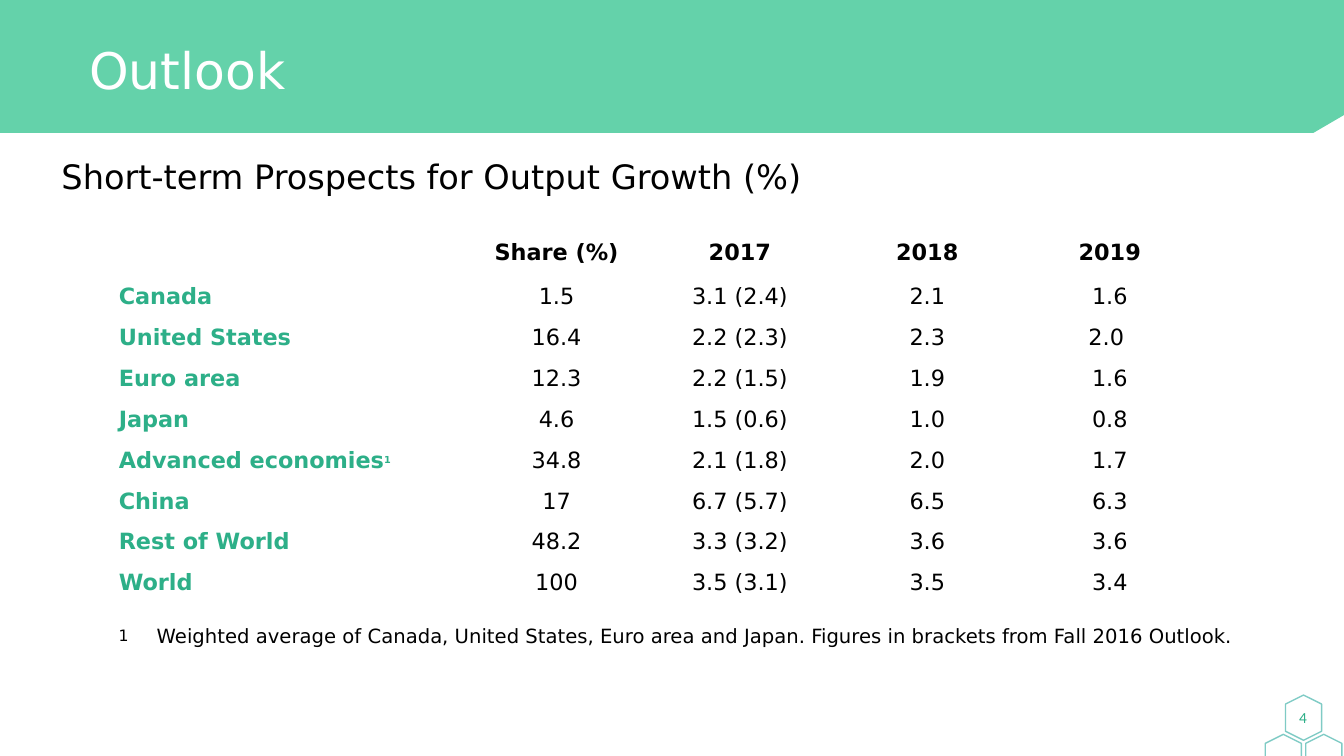
from dataclasses import dataclass

from lxml.etree import SubElement
from pptx import Presentation
from pptx.dml.color import RGBColor
from pptx.enum.shapes import MSO_SHAPE as Preset
from pptx.enum.text import MSO_ANCHOR as Anchor, PP_ALIGN as Align
from pptx.oxml.ns import qn
from pptx.util import Cm, Pt


@dataclass(frozen=True)
class Theme:
    font: str = "DejaVu Sans"
    number_font: str = "Calibri"
    band: RGBColor = RGBColor(0x64, 0xD2, 0xAA)
    accent: RGBColor = RGBColor(0x2D, 0xAF, 0x88)
    outline: RGBColor = RGBColor(0x00, 0x99, 0x8D)
    white: RGBColor = RGBColor(0xFF, 0xFF, 0xFF)
    black: RGBColor = RGBColor(0x00, 0x00, 0x00)
    title_size: int = 36
    heading_size: int = 24
    table_size: int = 16
    note_size: int = 14
    superscript_size: int = 12
    number_size: int = 11


THEME = Theme()
WIDTH, HEIGHT = 33.87, 19.05

HEADERS = ["", "Share (%)", "2017", "2018", "2019"]
OUTLOOK = [
    ["Canada", "1.5", "3.1 (2.4)", "2.1", "1.6"],
    ["United States", "16.4", "2.2 (2.3)", "2.3", "2.0 "],
    ["Euro area", "12.3", "2.2 (1.5)", "1.9", "1.6"],
    ["Japan", "4.6", "1.5 (0.6)", "1.0", "0.8"],
    ["Advanced economies", "34.8", "2.1 (1.8)", "2.0", "1.7"],
    ["China", "17", "6.7 (5.7)", "6.5", "6.3"],
    ["Rest of World", "48.2", "3.3 (3.2)", "3.6", "3.6"],
    ["World", "100", "3.5 (3.1)", "3.5", "3.4"],
]
FOOTNOTED = "Advanced economies"
COLUMN_WIDTHS = [9.09, 4.39, 4.85, 4.6, 4.6]
HEADER_HEIGHT, ROW_HEIGHT = 1.11, 1.03


def apply_format(target, values):
    for name, value in values.items():
        setattr(target, name, value)


def add_run(paragraph, text, size, color, bold=False, font=THEME.font):
    run = paragraph.add_run()
    run.text = text
    apply_format(run.font, {"name": font, "size": Pt(size), "bold": bold})
    run.font.color.rgb = color
    return run


def add_text(slide, box, text, size, color, anchor=Anchor.TOP,
             align=Align.LEFT, spacing=0.9, font=THEME.font):
    shape = slide.shapes.add_textbox(*map(Cm, box))
    apply_format(shape.text_frame, {"word_wrap": True, "vertical_anchor": anchor})
    paragraph = shape.text_frame.paragraphs[0]
    apply_format(paragraph, {"alignment": align, "line_spacing": spacing})
    add_run(paragraph, text, size, color, font=font)
    return paragraph


def add_title_band(slide, box):
    left, top, width, height = box
    right, bottom = left + width, top + height
    corners = [(right, top), (right, bottom - 0.45), (right - 0.77, bottom), (left, bottom)]
    builder = slide.shapes.build_freeform(Cm(left), Cm(top))
    builder.add_line_segments([(Cm(x), Cm(y)) for x, y in corners])
    band = builder.convert_to_shape()
    band.shadow.inherit = False
    band.fill.solid()
    band.fill.fore_color.rgb = THEME.band
    band.line.fill.background()
    add_text(slide, (left + 2, top + 1.02, 29.87, 1.65), "Outlook",
             THEME.title_size, THEME.white, Anchor.MIDDLE)


def add_page_number(slide, box):
    left, top, width, height = box
    for across, down in [(0, 0), (0.51, 0.99), (-0.51, 0.99)]:
        hexagon = slide.shapes.add_shape(
            Preset.HEXAGON, *map(Cm, (left + across, top + down, width, height)))
        hexagon.rotation = 90
        hexagon.shadow.inherit = False
        hexagon.fill.background()
        hexagon.line.width = Pt(1)
        hexagon.line.color.rgb = THEME.outline
        color = hexagon.line._ln.find(".//" + qn("a:srgbClr"))
        SubElement(color, qn("a:alpha"), val="50000")
    add_text(slide, (left + 0.05, top + 0.02, 1.02, 0.84), "4", THEME.number_size,
             THEME.accent, Anchor.MIDDLE, Align.CENTER, 1.0, THEME.number_font)


def add_outlook_table(slide, box):
    rows = [HEADERS] + OUTLOOK
    frame = slide.shapes.add_table(len(rows), len(HEADERS), *map(Cm, box))
    table = frame.table
    apply_format(table, {"first_row": False, "horz_banding": False})
    for column, width in zip(table.columns, COLUMN_WIDTHS):
        column.width = Cm(width)
    for row_index, values in enumerate(rows):
        is_header = row_index == 0
        table.rows[row_index].height = Cm(HEADER_HEIGHT if is_header else ROW_HEIGHT)
        for column_index, text in enumerate(values):
            is_label = column_index == 0
            cell = table.cell(row_index, column_index)
            cell.fill.background()
            paragraph = cell.text_frame.paragraphs[0]
            paragraph.alignment = Align.LEFT if is_label else Align.CENTER
            if text:
                add_run(paragraph, text, THEME.table_size,
                        THEME.accent if is_label else THEME.black, is_header or is_label)
            if text == FOOTNOTED:
                mark = add_run(paragraph, "1", THEME.superscript_size, THEME.accent, True)
                mark.font._element.set("baseline", "30000")


def add_footnote(slide, box):
    paragraph = add_text(
        slide, box,
        "Weighted average of Canada, United States, Euro area and Japan. "
        "Figures in brackets from Fall 2016 Outlook.",
        THEME.note_size, THEME.black)
    properties = paragraph._p.get_or_add_pPr()
    indent = Cm(0.96)
    properties.set("marL", str(indent))
    properties.set("indent", str(-indent))
    SubElement(properties, qn("a:buSzPct"), val="80000")
    SubElement(properties, qn("a:buFont"), typeface=THEME.font)
    SubElement(properties, qn("a:buChar"), char="1")


def build_outlook_slide(presentation):
    slide = presentation.slides.add_slide(presentation.slide_layouts[6])
    add_title_band(slide, (0, 0, WIDTH, 3.35))
    add_page_number(slide, (32.28, 17.63, 1.14, 0.91))
    add_text(slide, (1.3, 3.91, 31.22, 1.17), "Short-term Prospects for Output Growth (%)",
             THEME.heading_size, THEME.black)
    table_height = HEADER_HEIGHT + ROW_HEIGHT * len(OUTLOOK)
    add_outlook_table(slide, (2.74, 5.92, sum(COLUMN_WIDTHS), table_height))
    add_footnote(slide, (2.74, 15.67, 31.13, 0.79))


def main():
    presentation = Presentation()
    apply_format(presentation, {"slide_width": Cm(WIDTH), "slide_height": Cm(HEIGHT)})
    build_outlook_slide(presentation)
    presentation.save("out.pptx")


if __name__ == "__main__":
    main()
